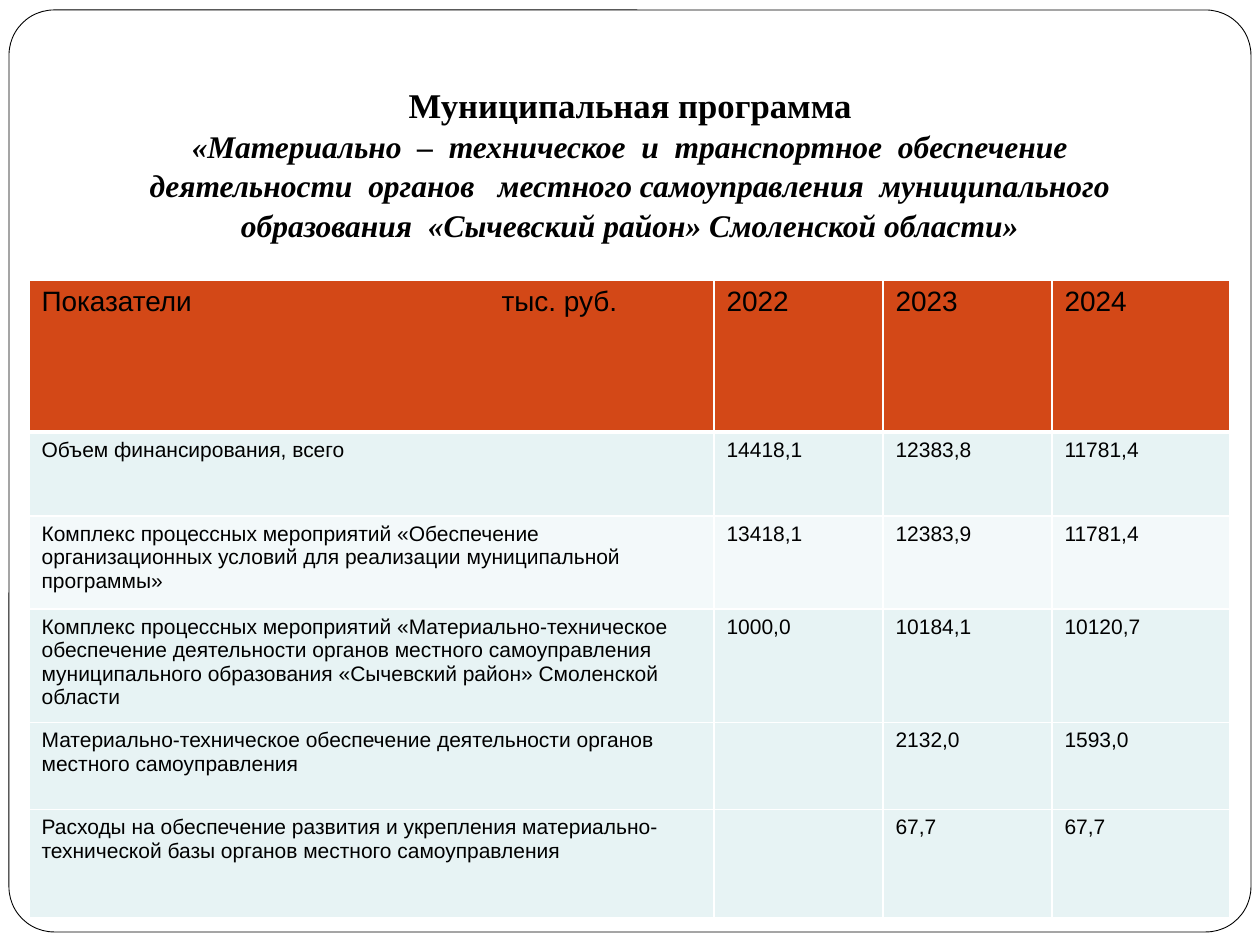
import pptx
import pptx.dml.color
import pptx.enum.shapes
import pptx.enum.text
import pptx.oxml
import pptx.oxml.ns
import pptx.util

PX = 914400 // 126
HEAD = ["Муниципальная программа",
        "«Материально  –  техническое  и  транспортное  обеспечение",
        "деятельности  органов   местного самоуправления  муниципального",
        "образования  «Сычевский район» Смоленской области»"]
ROWS = [
    ["Показатели\tтыс. руб.", "2022", "2023", "2024"],
    ["Объем финансирования, всего", "14418,1", "12383,8", "11781,4"],
    ["Комплекс процессных мероприятий «Обеспечение организационных условий "
     "для реализации муниципальной программы»", "13418,1", "12383,9", "11781,4"],
    ["Комплекс процессных мероприятий «Материально-техническое обеспечение "
     "деятельности органов местного самоуправления муниципального образования "
     "«Сычевский район» Смоленской области", "1000,0", "10184,1", "10120,7"],
    ["Материально-техническое обеспечение деятельности органов местного "
     "самоуправления", "", "2132,0", "1593,0"],
    ["Расходы на обеспечение развития и укрепления материально-технической "
     "базы органов местного самоуправления", "", "67,7", "67,7"],
]
WIDTHS = [685, 169, 169, 178]
HEIGHTS = [152, 84, 93, 107, 87, 108]
FILLS = ["D34817", "E7F3F4", "F3F9FA", "E7F3F4", "E7F3F4", "E7F3F4"]


def px(*nums):
    return [pptx.util.Emu(n * PX) for n in nums]


def tint(part, code):
    """Give a fill or a line one solid colour."""
    if hasattr(part, "solid"):
        part.solid()
        part = part.fore_color
    else:
        part = part.color
    part.rgb = pptx.dml.color.RGBColor.from_string(code)


def style(para, face, size, bold=False, slant=False):
    for run in para.runs:
        font = run.font
        font.name, font.size = face, pptx.util.Pt(size)
        font.bold, font.italic = bold, slant
        tint(font, "000000")


def edge(cell, side, width):
    return pptx.oxml.parse_xml(
        f'<a:ln{side} {pptx.oxml.ns.nsdecls("a")} w="{pptx.util.Pt(width)}">'
        '<a:solidFill><a:srgbClr val="FFFFFF"/></a:solidFill>'
        f'</a:ln{side}>')


def rule(cell, top, base):
    """Draw the white borders of a cell, which come before its fill."""
    props = cell._tc.get_or_add_tcPr()
    for i, (side, width) in enumerate(zip("LRTB", (1, 1, top, base))):
        props.insert(i, edge(cell, side, width))


def tab(para, left):
    props = para._p.get_or_add_pPr()
    props.append(pptx.oxml.parse_xml(
        f'<a:tabLst {pptx.oxml.ns.nsdecls("a")}>'
        f'<a:tab pos="{left * PX}" algn="l"/></a:tabLst>'))


def frame(slide, box):
    shape = slide.shapes.add_shape(
        pptx.enum.shapes.MSO_SHAPE.ROUNDED_RECTANGLE, *px(*box))
    shape.adjustments[0] = 0.049
    shape.shadow.inherit = False
    tint(shape.fill, "FFFFFF")
    tint(shape.line, "000000")
    shape.line.width = pptx.util.Pt(0.5)


def title(slide, box):
    text = slide.shapes.add_textbox(*px(*box)).text_frame
    text.word_wrap = True
    text.vertical_anchor = pptx.enum.text.MSO_ANCHOR.BOTTOM
    text.margin_bottom = pptx.util.Inches(0.1)
    text.text = "\n".join(HEAD)
    for i, para in enumerate(text.paragraphs):
        para.alignment = pptx.enum.text.PP_ALIGN.CENTER
        para.line_spacing = 1.04
        style(para, "Times New Roman", 18 if i else 19.8, True, i > 0)


def grid(slide, left, top):
    table = slide.shapes.add_table(
        len(ROWS), len(WIDTHS),
        *px(left, top, sum(WIDTHS), sum(HEIGHTS))).table
    for col, width in zip(table.columns, WIDTHS):
        col.width = px(width)[0]
    for r, words in enumerate(ROWS):
        table.rows[r].height = px(HEIGHTS[r])[0]
        for c, word in enumerate(words):
            cell = table.cell(r, c)
            cell.text_frame.text = word
            style(cell.text_frame.paragraphs[0], "Arial", 12 if r else 16)
            tint(cell.fill, FILLS[r])
            rule(cell, 3 if r == 1 else 1, 1 if r else 3)
    tab(table.cell(0, 0).text_frame.paragraphs[0], 460)


def main():
    deck = pptx.Presentation()
    deck.slide_width, deck.slide_height = px(1260, 945)
    slide = deck.slides.add_slide(deck.slide_layouts[6])
    frame(slide, (9, 10, 1242, 922))
    title(slide, (63, 38, 1134, 218))
    grid(slide, 29, 280)
    deck.save("out.pptx")


if __name__ == "__main__":
    main()
